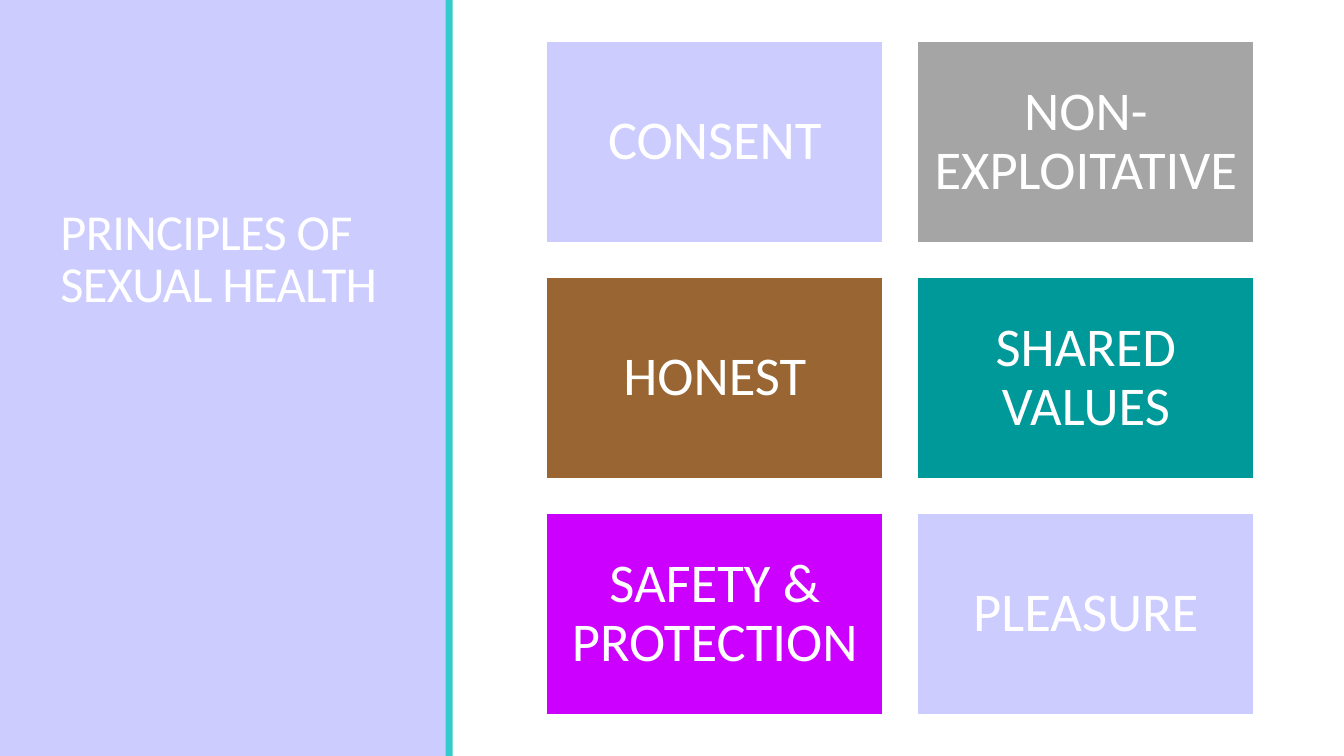
from pptx import Presentation
from pptx.dml.color import RGBColor
from pptx.enum.shapes import MSO_SHAPE
from pptx.enum.text import MSO_ANCHOR, MSO_AUTO_SIZE, PP_ALIGN
from pptx.oxml.ns import qn
from pptx.util import Pt

PX = 9144
RECT = MSO_SHAPE.RECTANGLE
MID, LOW = MSO_ANCHOR.MIDDLE, MSO_ANCHOR.BOTTOM
LEFT, MIDST = PP_ALIGN.LEFT, PP_ALIGN.CENTER
FIXED = MSO_AUTO_SIZE.NONE


def tint(part, hue):
    part.fill.solid()
    part.fill.fore_color.rgb = RGBColor.from_string(hue)


def write(frame, text, size, lead, align, anchor):
    frame.word_wrap = True
    frame.auto_size = FIXED
    frame.vertical_anchor = anchor
    para = frame.paragraphs[0]
    para.alignment = align
    para.line_spacing = lead
    run = para.add_run()
    run.text = text
    run.font.name = "Calibri"
    run.font.size = Pt(size)
    tint(run.font, "FFFFFF")


deck = Presentation()
deck.slide_width, deck.slide_height = 1333 * PX, 750 * PX
slide = deck.slides.add_slide(deck.slide_layouts[5])
shapes = slide.shapes

for left, width, hue in [(0, 443, "CCCCFF"), (442, 7, "33CCCC")]:
    band = shapes.add_shape(RECT, left * PX, 0, width * PX, 750 * PX)
    band.shadow.inherit = False
    tint(band, hue)
    band.line.fill.background()

title = shapes.title
title.left, title.top = 50 * PX, 65 * PX
title.width, title.height = 350 * PX, 250 * PX
write(title.text_frame, "PRINCIPLES OF SEXUAL HEALTH", 36, 0.85, LEFT, LOW)
for prop in title.element.iter(qn("a:rPr")):
    prop.set("spc", "-50")
title.element.getparent().append(title.element)

cards = [
    ("CONSENT", "CCCCFF"),
    ("NON-EXPLOITATIVE", "A5A5A5"),
    ("HONEST", "996633"),
    ("SHARED VALUES", "009999"),
    ("SAFETY & PROTECTION", "CC00FF"),
    ("PLEASURE", "CCCCFF"),
]
for place, (text, hue) in enumerate(cards):
    row, col = divmod(place, 2)
    left, top = 542 + col * 368, 41 + row * 234
    card = shapes.add_shape(RECT, left * PX, top * PX, 334 * PX, 200 * PX)
    card.shadow.inherit = False
    tint(card, hue)
    tint(card.line, "FFFFFF")
    card.line.width = Pt(1.25)
    frame = card.text_frame
    frame.margin_left = frame.margin_right = 16 * PX
    frame.margin_top = frame.margin_bottom = 16 * PX
    write(frame, text, 39, 0.9, MIDST, MID)

deck.save("out.pptx")
